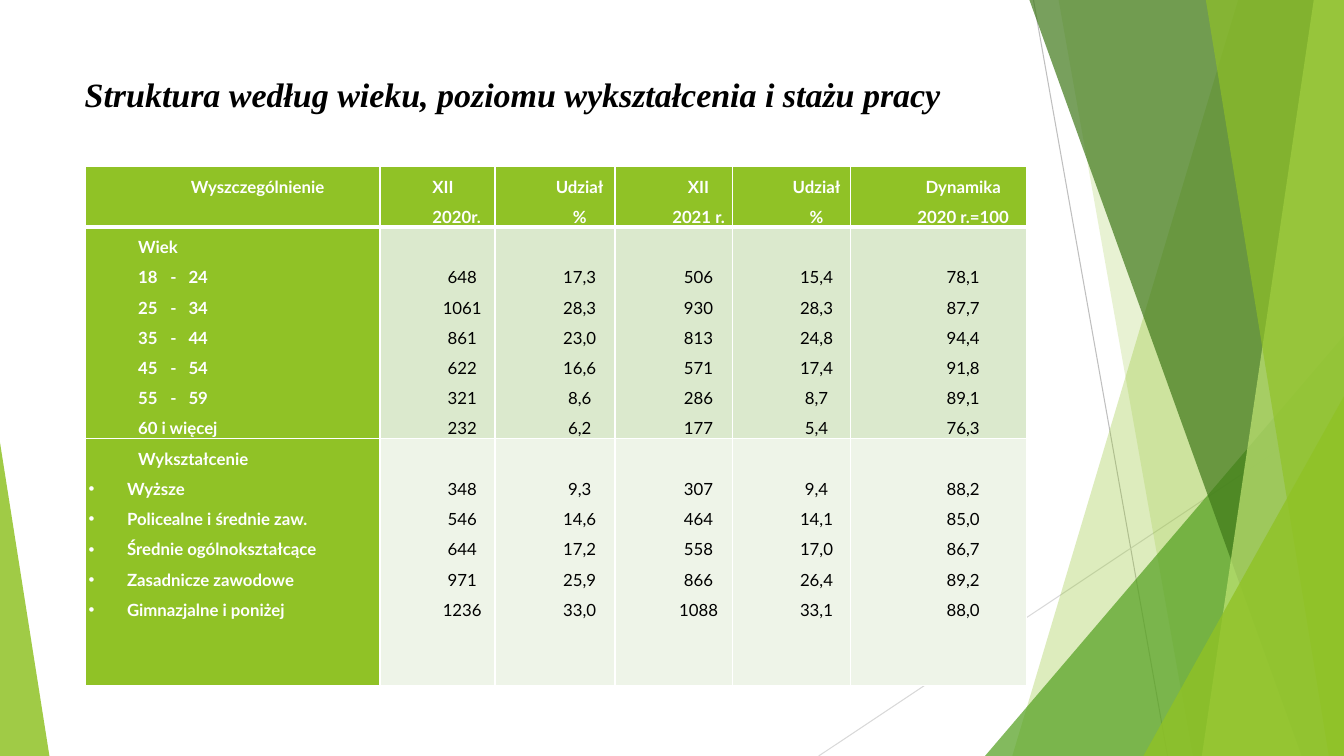
from lxml.etree import SubElement
from pptx import Presentation
from pptx.dml.color import RGBColor
from pptx.enum.shapes import MSO_CONNECTOR, MSO_SHAPE
from pptx.enum.text import MSO_ANCHOR, MSO_AUTO_SIZE, PP_ALIGN
from pptx.oxml.ns import qn
from pptx.util import Inches, Pt

WHITE = RGBColor(0xFF, 0xFF, 0xFF)
BLACK = RGBColor(0x00, 0x00, 0x00)
LIME = RGBColor(0x90, 0xC2, 0x26)
PALE_LIME = RGBColor(0xC0, 0xE4, 0x74)
GREEN = RGBColor(0x54, 0xA0, 0x21)
DARK_GREEN = RGBColor(0x3F, 0x78, 0x19)
AGE_BAND = RGBColor(0xDB, 0xE9, 0xCD)
EDUCATION_BAND = RGBColor(0xEE, 0xF4, 0xE8)
GREY = RGBColor(0xBF, 0xBF, 0xBF)
LIGHT_GREY = RGBColor(0xD9, 0xD9, 0xD9)

WIDTH, HEIGHT = 13.33, 7.5
INSET, INDENT, BULLET_INDENT, LINE_HEIGHT = 0.03, 0.49, 0.38, 0.3

# Table content
COLUMN_WIDTHS = [2.92, 1.14, 1.19, 1.17, 1.17, 1.74]
ROW_HEIGHTS = [0.42, 2.05, 2.45]
HEADERS = [["Wyszczególnienie"], ["XII", "2020r."], ["Udział", "%"],
           ["XII", "2021 r."], ["Udział", "%"], ["Dynamika", "2020 r.=100"]]
AGE_LABELS = ["Wiek", "18\t-\t24", "25\t-\t34", "35\t-\t44", "45\t-\t54",
              "55\t-\t59", "60 i więcej"]
AGE_VALUES = [
    ["648", "1061", "861", "622", "321", "232"],
    ["17,3", "28,3", "23,0", "16,6", "8,6", "6,2"],
    ["506", "930", "813", "571", "286", "177"],
    ["15,4", "28,3", "24,8", "17,4", "8,7", "5,4"],
    ["78,1", "87,7", "94,4", "91,8", "89,1", "76,3"],
]
EDUCATION_LABELS = ["Wykształcenie", "Wyższe", "Policealne i średnie zaw.",
                    "Średnie ogólnokształcące", "Zasadnicze zawodowe",
                    "Gimnazjalne i poniżej"]
EDUCATION_VALUES = [
    ["348", "546", "644", "971", "1236"],
    ["9,3", "14,6", "17,2", "25,9", "33,0"],
    ["307", "464", "558", "866", "1088"],
    ["9,4", "14,1", "17,0", "26,4", "33,1"],
    ["88,2", "85,0", "86,7", "89,2", "88,0"],
]


class SlideBuilder:
    title_font, table_font = "Times New Roman", "Lato"
    title_size, table_size = Pt(24.3), Pt(12)

    def __init__(self, page):
        self.page = page

    def line(self, start, end, color):
        line = self.page.shapes.add_connector(
            MSO_CONNECTOR.STRAIGHT, *map(Inches, start + end))
        line.line.color.rgb = color
        line.line.width = Pt(0.75)
        SubElement(line._element.spPr, qn("a:effectLst"))

    def paint(self, shape, color, opacity):
        shape.shadow.inherit = False
        shape.fill.solid()
        shape.fill.fore_color.rgb = color
        shape.line.fill.background()
        color_node = shape._element.spPr.find(qn("a:solidFill"))[0]
        SubElement(color_node, qn("a:alpha"), val=str(opacity * 1000))

    def blade(self, top_left, bottom_left, color, opacity):
        """Panel from a slanted left edge to the right edge of the slide."""
        outline = self.page.shapes.build_freeform(
            Inches(top_left), 0, scale=1.0)
        corners = [(WIDTH, 0), (WIDTH, HEIGHT), (bottom_left, HEIGHT)]
        outline.add_line_segments(
            [(Inches(x), Inches(y)) for x, y in corners], close=True)
        self.paint(outline.convert_to_shape(), color, opacity)

    def triangle(self, left, top, width, peak, color, opacity):
        shape = self.page.shapes.add_shape(
            MSO_SHAPE.ISOSCELES_TRIANGLE, Inches(left), Inches(top),
            Inches(width), Inches(HEIGHT - top))
        shape.adjustments[0] = peak
        self.paint(shape, color, opacity)

    def span(self, para, text, font, size, color, bold, italic=False):
        span = para.add_run()
        span.text = text
        span.font.name, span.font.size = font, size
        span.font.bold, span.font.italic = bold, italic
        span.font.color.rgb = color

    def title(self, text):
        box = self.page.shapes.title
        box.left, box.top = Inches(0.74), Inches(0.67)
        box.width, box.height = Inches(9.4), Inches(0.53)
        frame = box.text_frame
        frame.word_wrap = True
        frame.auto_size = MSO_AUTO_SIZE.NONE
        frame.vertical_anchor = MSO_ANCHOR.MIDDLE
        para = frame.paragraphs[0]
        para.alignment = PP_ALIGN.LEFT
        self.span(para, text, self.title_font, self.title_size, BLACK, True, True)

    def table(self):
        frame = self.page.shapes.add_table(
            len(ROW_HEIGHTS), len(COLUMN_WIDTHS), Inches(0.85), Inches(1.65),
            Inches(sum(COLUMN_WIDTHS)), Inches(sum(ROW_HEIGHTS)))
        table = frame.table
        table.horz_banding = False
        for column, width in zip(table.columns, COLUMN_WIDTHS):
            column.width = Inches(width)
        for row, height in zip(table.rows, ROW_HEIGHTS):
            row.height = Inches(height)
        return table

    def cell(self, cell, lines, fill, color=WHITE, bold=True, top=0,
             align=PP_ALIGN.CENTER, widths=(1, 1, 1, 1), bulleted=False, tabs=()):
        cell.margin_left = Inches(INSET if bulleted else INSET + INDENT)
        cell.margin_right = Inches(INSET)
        cell.margin_top, cell.margin_bottom = Inches(top), 0
        self.borders(cell, widths)
        cell.fill.solid()
        cell.fill.fore_color.rgb = fill
        for number, text in enumerate(lines):
            frame = cell.text_frame
            para = frame.add_paragraph() if number else frame.paragraphs[0]
            para.alignment, para.line_spacing = align, 1.5
            if bulleted:
                self.indent(para, bullet=number > 0)
            if tabs:
                stops = SubElement(para._p.get_or_add_pPr(), qn("a:tabLst"))
                for stop in tabs:
                    SubElement(stops, qn("a:tab"), pos=str(Inches(stop)), algn="l")
            self.span(para, text, self.table_font, self.table_size, color, bold)

    def indent(self, para, bullet):
        properties = para._p.get_or_add_pPr()
        properties.set("marL", str(Inches(BULLET_INDENT if bullet else INDENT)))
        properties.set("indent", str(Inches(-BULLET_INDENT if bullet else 0)))
        if bullet:
            SubElement(properties, qn("a:buFont"), typeface="Arial")
            SubElement(properties, qn("a:buChar"), char="•")

    def borders(self, cell, widths):
        properties = cell._tc.get_or_add_tcPr()
        for side, width in zip("LRTB", widths):
            edge = SubElement(properties, qn(f"a:ln{side}"), w=str(Pt(width)))
            fill = SubElement(edge, qn("a:solidFill"))
            SubElement(fill, qn("a:srgbClr"), val=str(WHITE))


def main():
    deck = Presentation()
    deck.slide_width, deck.slide_height = Inches(WIDTH), Inches(HEIGHT)
    builder = SlideBuilder(deck.slides.add_slide(deck.slide_layouts[5]))

    # Green facets at the edges
    builder.line((10.25, 0), (11.58, HEIGHT), GREY)
    builder.line((WIDTH, 4.03), (8.12, HEIGHT), LIGHT_GREY)
    builder.blade(12.28, 10.04, LIME, 30)
    builder.blade(10.5, 11.83, LIME, 20)
    builder.triangle(9.77, 3.33, 3.56, 1, GREEN, 72)
    builder.blade(10.21, 12.91, DARK_GREEN, 70)
    builder.blade(13.03, 11.92, PALE_LIME, 70)
    builder.blade(11.96, 13.18, LIME, 65)
    builder.triangle(11.34, 3.93, 1.99, 1, LIME, 80)
    builder.triangle(0, 4.39, 0.49, 0, LIME, 85)

    # Title
    builder.title("Struktura według wieku, poziomu wykształcenia i stażu pracy")

    # Table: header row, then the label column, then the values
    table = builder.table()
    for column, lines in enumerate(HEADERS):
        align = PP_ALIGN.LEFT if column == 1 else PP_ALIGN.CENTER
        builder.cell(table.cell(0, column), lines, LIME, align=align,
                     widths=(1, 1, 1, 3))
    below_header = (1, 1, 3, 1)
    builder.cell(table.cell(1, 0), AGE_LABELS, LIME, align=PP_ALIGN.LEFT,
                 widths=below_header, tabs=(0.32, 0.5))
    builder.cell(table.cell(2, 0), EDUCATION_LABELS, LIME, align=PP_ALIGN.LEFT,
                 bulleted=True)
    bands = [(1, AGE_VALUES, AGE_BAND, below_header),
             (2, EDUCATION_VALUES, EDUCATION_BAND, (1, 1, 1, 1))]
    for row, columns, fill, widths in bands:
        for column, values in enumerate(columns, start=1):
            builder.cell(table.cell(row, column), values, fill, BLACK, False,
                         top=LINE_HEIGHT, widths=widths)

    deck.save("out.pptx")


if __name__ == "__main__":
    main()
